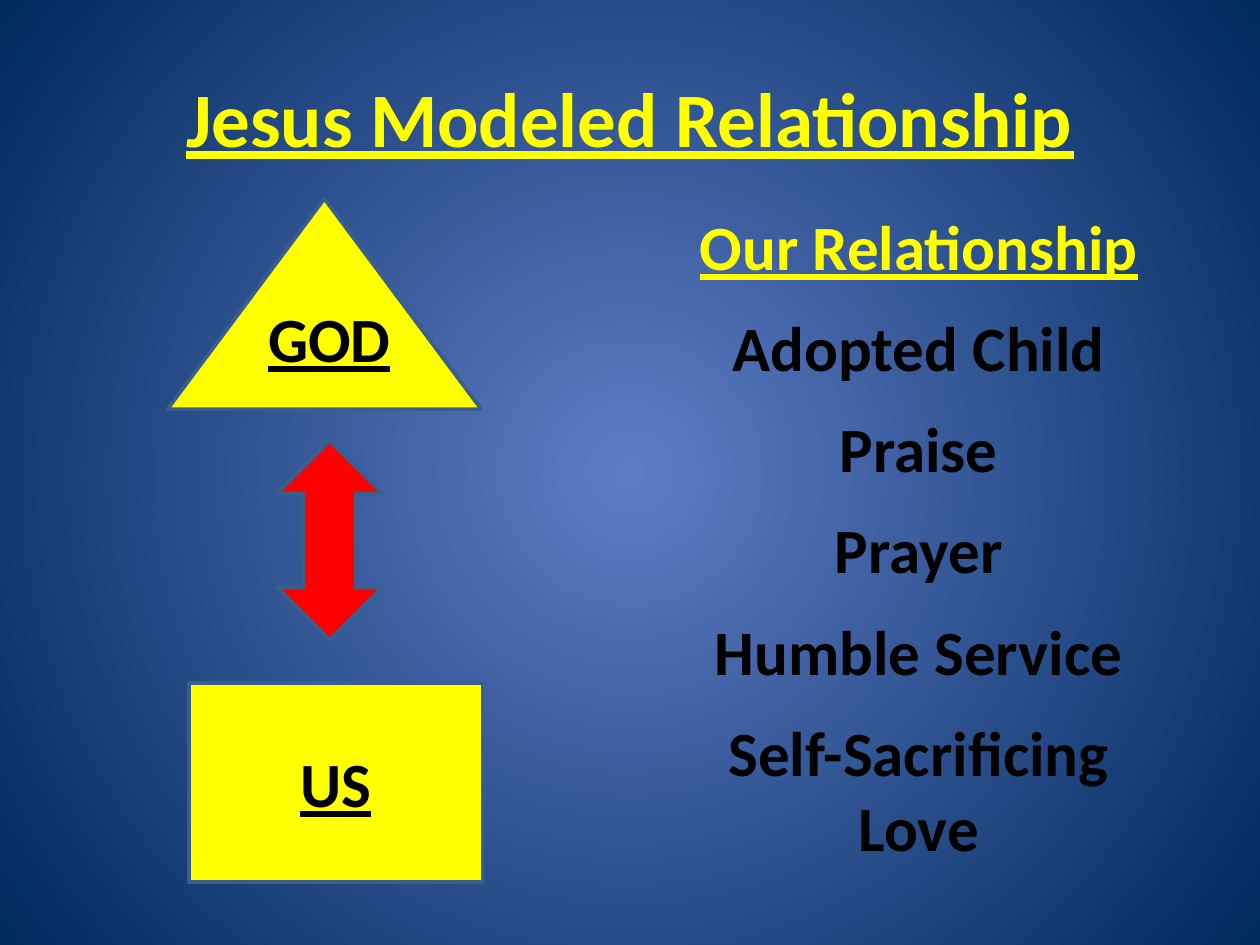
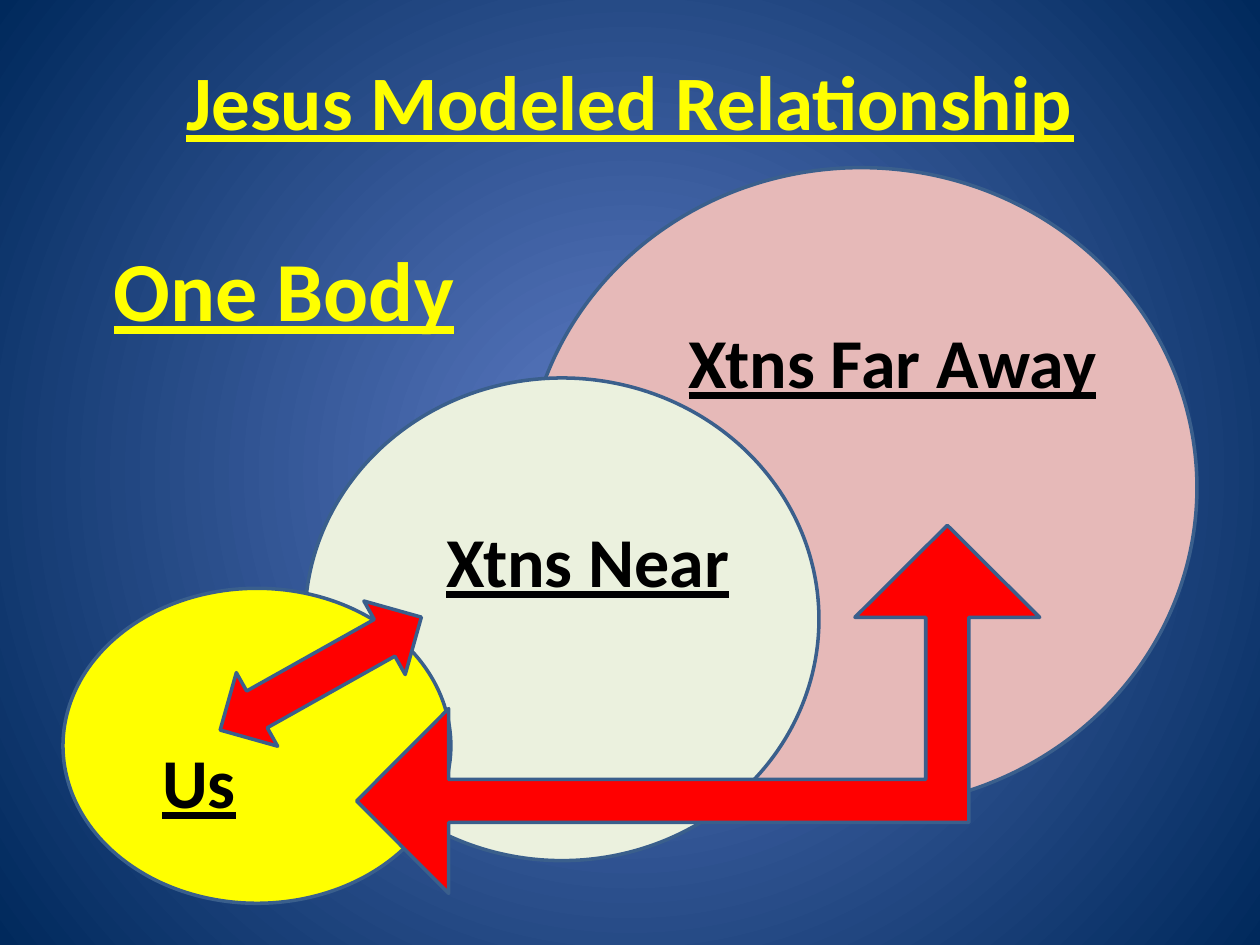
from lxml.etree import SubElement
from pptx import Presentation
from pptx.dml.color import RGBColor
from pptx.enum.shapes import MSO_SHAPE
from pptx.enum.text import MSO_ANCHOR, PP_ALIGN
from pptx.oxml import parse_xml
from pptx.oxml.ns import nsdecls, qn
from pptx.util import Cm, Pt

YELLOW = RGBColor(0xFF, 0xFF, 0x00)
BLACK = RGBColor(0x00, 0x00, 0x00)
RED = RGBColor(0xFF, 0x00, 0x00)
PINK = RGBColor(0xE6, 0xB9, 0xB8)
PALE_GREEN = RGBColor(0xEB, 0xF1, 0xDE)
EDGE_BLUE = RGBColor(0x3A, 0x5F, 0x8C)
GLOW_BLUE = RGBColor(0x5E, 0x7C, 0xC5)
DEEP_BLUE = RGBColor(0x00, 0x29, 0x5C)

RADIAL_PATH = (
    f'<a:path {nsdecls("a")} path="circle">'
    '<a:fillToRect l="50000" t="50000" r="50000" b="50000"/></a:path>'
)
TEXT_OUTLINE = (
    f'<a:ln {nsdecls("a")} w="{Pt(0.75)}">'
    f'<a:solidFill><a:srgbClr val="{BLACK}"/></a:solidFill></a:ln>'
)


def write(paragraph, text, size=36, color=BLACK, underline=True, gap=0):
    """Put one centred, bold, outlined run into a paragraph."""
    paragraph.alignment = PP_ALIGN.CENTER
    paragraph.space_before = Pt(gap)
    run = paragraph.add_run()
    run.text = text
    font = run.font
    font.name = "Calibri"
    font.size = Pt(size)
    font.bold = True
    font.underline = underline
    font.color.rgb = color
    font.fill  # noqa
    run._r.get_or_add_rPr().insert(0, parse_xml(TEXT_OUTLINE))


class Deck:
    """Hold the shared style and the slide being filled."""

    def __init__(self):
        """Set the slide size and the radial background."""
        self.prs = Presentation()
        self.prs.slide_width = Cm(25.4)
        self.prs.slide_height = Cm(19.05)
        self.slide = None
        master = self.prs.slide_master
        backdrop = master.background.fill
        backdrop.gradient()
        for stop, color in zip(backdrop.gradient_stops, (GLOW_BLUE, DEEP_BLUE)):
            stop.color.rgb = color
        linear = master.element.find(f".//{qn('p:bg')}//{qn('a:lin')}")
        linear.getparent().replace(linear, parse_xml(RADIAL_PATH))

    def start(self, title, top):
        """Add a slide with its headline."""
        self.slide = self.prs.slides.add_slide(self.prs.slide_layouts[6])
        headline = self.label(title, 1.27, top, 22.86, 3.18, size=44, color=YELLOW)
        headline.vertical_anchor = MSO_ANCHOR.MIDDLE

    def label(self, text, left, top, width, height, **style):
        """Add a wrapping text box and return its frame."""
        frame = self.slide.shapes.add_textbox(
            Cm(left), Cm(top), Cm(width), Cm(height)
        ).text_frame
        frame.word_wrap = True
        write(frame.paragraphs[0], text, **style)
        return frame

    def figure(self, kind, fill, left, top, width, height,
               text=None, rotation=0, adjustments=()):
        """Add a filled shape with the common blue edge."""
        figure = self.slide.shapes.add_shape(
            kind, Cm(left), Cm(top), Cm(width), Cm(height)
        )
        figure.shadow.inherit = False
        figure.fill.solid()
        figure.fill.fore_color.rgb = fill
        figure.line.color.rgb = EDGE_BLUE
        figure.line.width = Pt(2)
        figure.rotation = rotation
        for index, value in enumerate(adjustments):
            figure.adjustments[index] = value
        if text:
            figure.text_frame.vertical_anchor = MSO_ANCHOR.MIDDLE
            write(figure.text_frame.paragraphs[0], text)


def god_and_us(deck):
    """Show the bond between God and us."""
    deck.start("Jesus Modeled Relationship", 0.76)
    deck.figure(MSO_SHAPE.ISOSCELES_TRIANGLE, YELLOW, 3.38, 4.01, 6.32, 4.24)
    deck.figure(MSO_SHAPE.UP_DOWN_ARROW, RED, 5.59, 8.89, 2.11, 4.01)
    deck.figure(MSO_SHAPE.RECTANGLE, YELLOW, 3.81, 13.77, 5.92, 4.01, text="US")
    deck.label("GOD", 4.95, 5.92, 3.38, 1.8)
    traits = deck.label("Our Relationship", 13.34, 4.06, 10.36, 14.35, color=YELLOW)
    for trait in ("Adopted Child", "Praise", "Prayer", "Humble Service",
                  "Self-Sacrificing Love"):
        write(traits.add_paragraph(), trait, underline=False, gap=14.6)


def one_body(deck):
    """Show the circles of fellowship."""
    deck.start("Jesus Modeled Relationship", 0.43)
    for fill, *box in (
        (PINK, 10.59, 3.38, 13.54, 12.9),
        (PALE_GREEN, 6.15, 7.62, 10.36, 9.73),
        (YELLOW, 1.27, 11.86, 7.82, 6.35),
    ):
        deck.figure(MSO_SHAPE.OVAL, fill, *box)
    for circle, left, top, width in (
        ("Us", 2.11, 14.76, 3.81),
        ("Xtns Near", 6.35, 10.31, 11),
        ("Xtns Far Away", 11.86, 6.3, 12.27),
    ):
        deck.label(circle, left, top, width, 1.96, size=40)
    deck.figure(MSO_SHAPE.LEFT_UP_ARROW, RED, 7.19, 10.59, 13.77, 7.42,
                adjustments=(0.117, 0.251, 0.25))
    deck.figure(MSO_SHAPE.LEFT_RIGHT_ARROW, RED, 4.14, 12.73, 4.65, 1.7,
                rotation=150.7)
    deck.label("One Body", 1.7, 4.67, 8.05, 2.31, size=48, color=YELLOW)


def main():
    """Build and save the deck."""
    deck = Deck()
    god_and_us(deck)
    one_body(deck)
    deck.prs.save("out.pptx")


if __name__ == "__main__":
    main()
